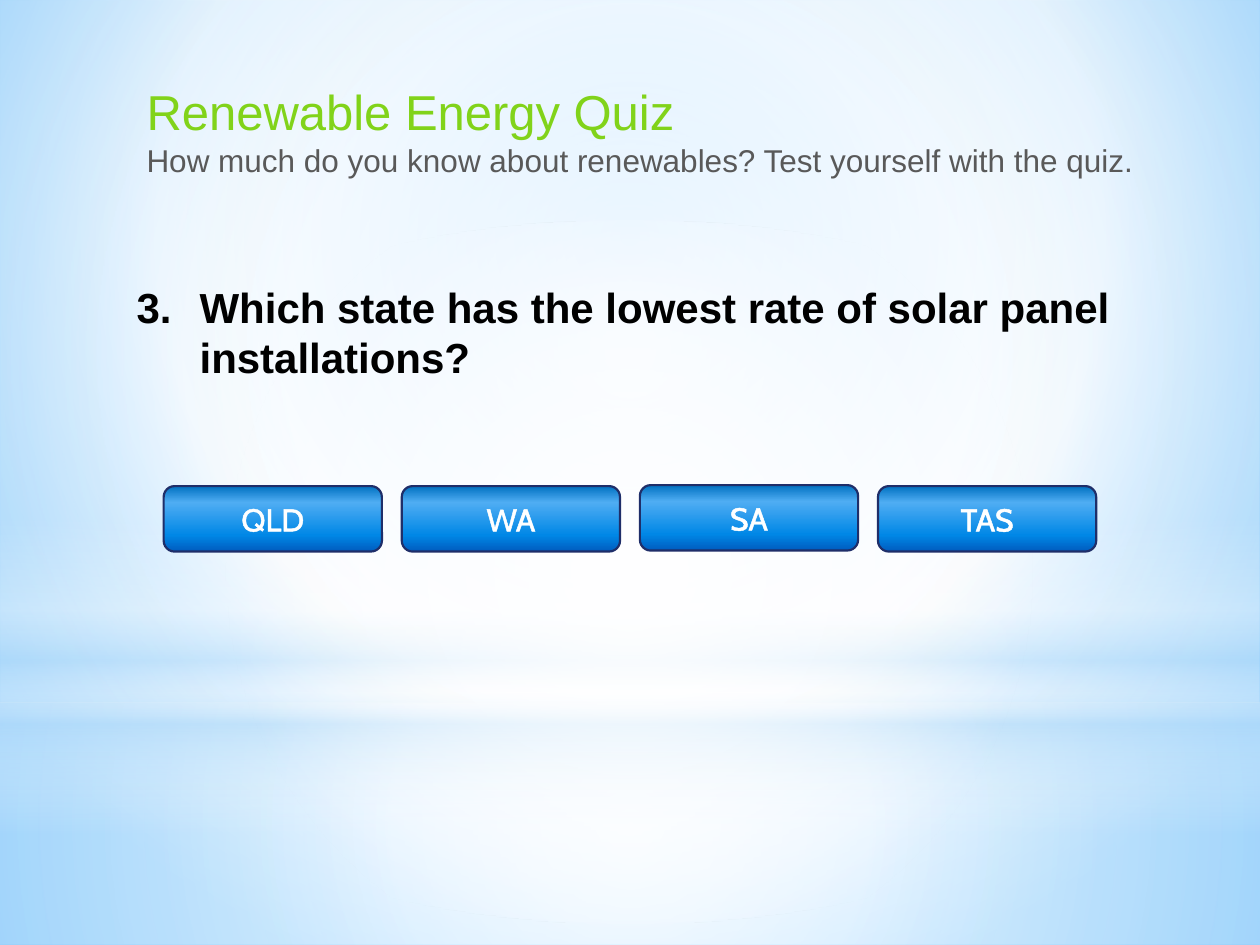
from lxml import etree
from pptx import Presentation
from pptx import util as u
from pptx.dml.color import RGBColor
from pptx.enum import shapes, text
from pptx.oxml.ns import qn

BLUE = "B4DCFA"
CENTRE = (50, 50, 50, 50)


def style(run, size, colour, font="Arial", bold=False):
    run.font.size = u.Pt(size)
    run.font.name = font
    run.font.bold = bold
    run.font.color.rgb = RGBColor.from_string(colour)


def paint(fill, element, stops, focus=None):
    """Gradient of (position, colour, opacity) stops: circular around focus, else downward."""
    fill.gradient()
    gradient = element.find(".//" + qn("a:gradFill"))
    for child in list(gradient):
        gradient.remove(child)
    stop_list = etree.SubElement(gradient, qn("a:gsLst"))
    for position, colour, opacity in stops:
        stop = etree.SubElement(stop_list, qn("a:gs"), pos=str(position * 1000))
        value = etree.SubElement(stop, qn("a:srgbClr"), val=colour)
        if opacity < 100:
            etree.SubElement(value, qn("a:alpha"), val=str(opacity * 1000))
    if focus:
        circle = etree.SubElement(gradient, qn("a:path"), path="circle")
        sides = {side: str(share * 1000) for side, share in zip("ltrb", focus)}
        etree.SubElement(circle, qn("a:fillToRect"), **sides)
    else:
        etree.SubElement(gradient, qn("a:lin"), ang="5400000", scaled="0")


presentation = Presentation()
presentation.slide_width = u.Cm(25.4)
presentation.slide_height = u.Cm(19.05)
slide = presentation.slides.add_slide(presentation.slide_layouts[1])

# Background
paint(slide.background.fill, slide._element,
      [(0, "9ED5FF", 100), (60, "FFFFFF", 100), (100, "5BB9FF", 100)], (20, 10, 20, 60))

# Light bands and glow, behind the text
RECTANGLE, OVAL = shapes.MSO_SHAPE.RECTANGLE, shapes.MSO_SHAPE.OVAL
layers = [
    (RECTANGLE, 14.17, 4.88, CENTRE,
     [(0, "FFFFFF", 91), (37, "FFFFFF", 76), (100, BLUE, 79)]),
    (RECTANGLE, 0, 14.17, CENTRE,
     [(0, "FFFFFF", 89), (48, "FFFFFF", 62), (100, BLUE, 79)]),
    (RECTANGLE, 10.46, 6.35, None,
     [(0, "FFFFFF", 0), (29, "FFFFFF", 30), (45, BLUE, 40),
      (55, "FFFFFF", 26), (65, BLUE, 60), (100, "FFFFFF", 0)]),
    (OVAL, 4.45, 14.17, CENTRE, [(0, "FFFFFF", 100), (56, "FFFFFF", 0)]),
]
for index, (kind, top, height, focus, stops) in enumerate(layers):
    shape = slide.shapes.add_shape(kind, 0, u.Cm(top), presentation.slide_width, u.Cm(height))
    shape.shadow.inherit = False
    shape.line.fill.background()
    paint(shape.fill, shape._element, stops, focus)
    slide.shapes._spTree.insert(2 + index, shape._element)

# Title and question placeholders
title, question = slide.placeholders
title.text_frame.text = ("Renewable Energy Quiz\n"
                         "How much do you know about renewables? Test yourself with the quiz.")
question.text_frame.text = "Which state has the lowest rate of solar panel installations?"
for shape, left, top, width, height in [(title, 2.7, 1.52, 21.4, 2.24),
                                        (question, 2.5, 5.54, 21, 2.31)]:
    shape.left, shape.top, shape.width, shape.height = map(u.Cm, (left, top, width, height))
    shape.text_frame.vertical_anchor = text.MSO_ANCHOR.TOP
    shape.text_frame.auto_size = text.MSO_AUTO_SIZE.SHAPE_TO_FIT_TEXT
    for paragraph in shape.text_frame.paragraphs:
        paragraph.alignment = text.PP_ALIGN.LEFT
        paragraph.space_before = u.Pt(0)

heading, subtitle = title.text_frame.paragraphs
style(heading.runs[0], 28, "81D31A")
style(subtitle.runs[0], 18, "595959")

# Question number
paragraph = question.text_frame.paragraphs[0]
style(paragraph.runs[0], 24, "000000", bold=True)
properties = paragraph._p.get_or_add_pPr()
properties.set("marL", str(u.Cm(1.27)))
properties.set("indent", str(-u.Cm(1.27)))
etree.SubElement(properties, qn("a:buFont"), typeface="Arial")
etree.SubElement(properties, qn("a:buAutoNum"), type="arabicPeriod", startAt="3")

# Answer buttons
for index, (answer, top) in enumerate([("QLD", 9.8), ("WA", 9.8), ("SA", 9.78), ("TAS", 9.8)]):
    button = slide.shapes.add_shape(shapes.MSO_SHAPE.ROUNDED_RECTANGLE, u.Cm(3.3 + 4.8 * index),
                                    u.Cm(top), u.Cm(4.4), u.Cm(1.32))
    button.shadow.inherit = False
    paint(button.fill, button._element,
          [(0, "0070C0", 100), (25, "4FADF3", 100), (75, "0087E6", 100), (100, "005CBF", 100)])
    button.line.color.rgb = RGBColor.from_string("1F2E69")
    button.line.width = u.Pt(1.25)
    button.text_frame.text = answer
    button.text_frame.vertical_anchor = text.MSO_ANCHOR.MIDDLE
    paragraph = button.text_frame.paragraphs[0]
    paragraph.alignment = text.PP_ALIGN.CENTER
    run = paragraph.runs[0]
    style(run, 18, "FFFFFF", "Cabin")
    outline = etree.Element(qn("a:ln"), w=str(u.Pt(1.45)))
    solid = etree.SubElement(outline, qn("a:solidFill"))
    etree.SubElement(solid, qn("a:srgbClr"), val="FFFFFF")
    run._r.get_or_add_rPr().insert(0, outline)

presentation.save("out.pptx")
